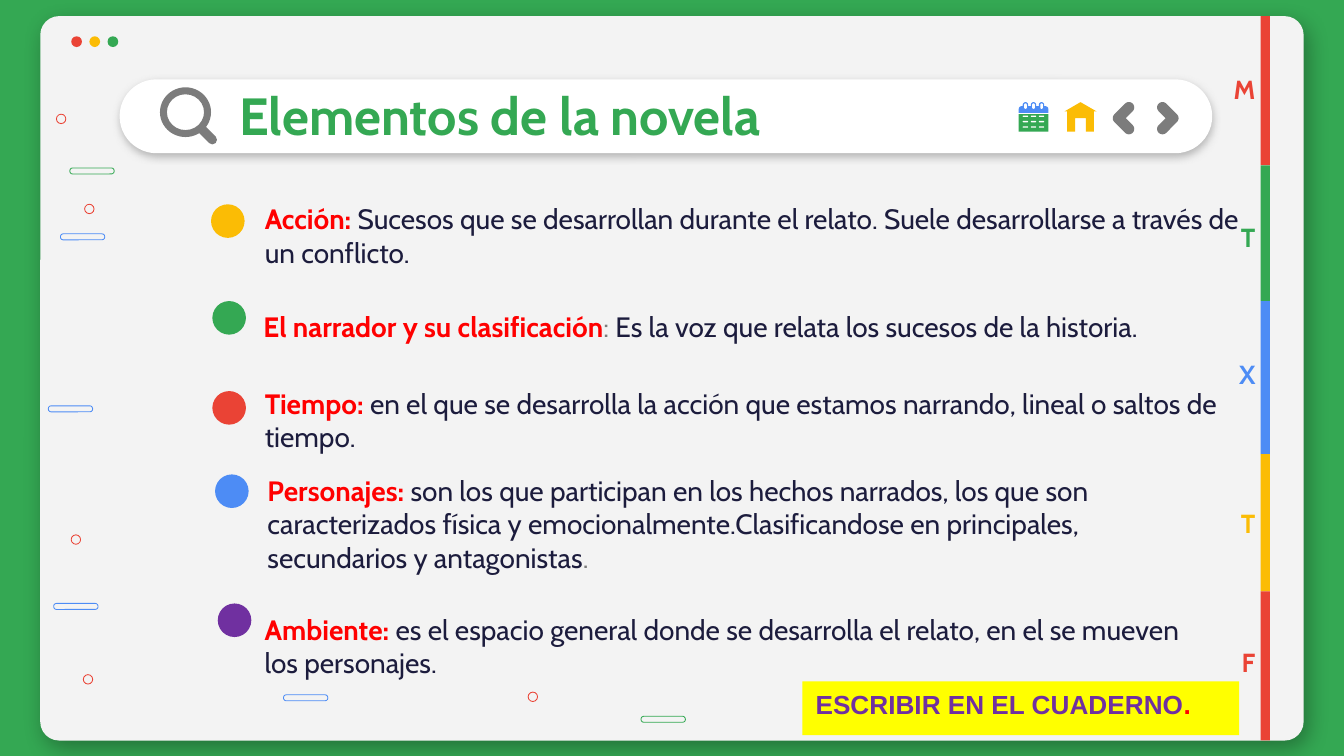
from math import cos, radians, sin, sqrt

from lxml import etree
from pptx import Presentation
from pptx.dml.color import RGBColor
from pptx.enum.shapes import MSO_CONNECTOR, MSO_SHAPE
from pptx.enum.text import MSO_ANCHOR, MSO_AUTO_SIZE, PP_ALIGN
from pptx.oxml.ns import qn
from pptx.util import Inches, Pt

OVAL, RECT, ROUND = MSO_SHAPE.OVAL, MSO_SHAPE.RECTANGLE, MSO_SHAPE.ROUNDED_RECTANGLE
DONUT, TOP_ROUND = MSO_SHAPE.DONUT, MSO_SHAPE.ROUND_2_SAME_RECTANGLE
LEFT, RIGHT = PP_ALIGN.LEFT, PP_ALIGN.RIGHT
TOP, MIDDLE = MSO_ANCHOR.TOP, MSO_ANCHOR.MIDDLE

THEME = {
    "green": "34A853", "red": "EA4335", "yellow": "FBBC05", "blue": "4D8CF5",
    "purple": "7030A0", "gray": "7C7C7C", "panel": "F3F3F3", "white": "FFFFFF",
    "term": "FF0000", "ink": "1C1C3D", "note": "FFFF00", "black": "000000",
    "font": "Cabin", "note_font": "Arial", "title": 28, "body": 15, "label": 14,
}

TITLE = "Elementos de la novela"
# runs (text, colour, bold), text box, bullet colour, bullet position
ELEMENTS = [
    ([("Acción: ", "term", True),
      ("Sucesos que se desarrollan durante el relato. Suele desarrollarse a "
       "través de un conflicto.", "ink", False)],
     (1.87, 1.47, 7.53, 0.56), "yellow", (1.57, 1.52)),
    ([("El narrador y su clasificación", "term", True), (": ", "gray", False),
      ("Es la voz que relata los sucesos de la historia.", "ink", False)],
     (1.86, 2.12, 7.35, 0.62), "green", (1.58, 2.24)),
    ([("Tiempo: ", "term", True),
      ("en el que se desarrolla la acción que estamos narrando, lineal o "
       "saltos de tiempo.", "ink", False)],
     (1.87, 2.78, 7.35, 0.69), "red", (1.58, 2.91)),
    ([("Personajes: ", "term", True),
      ("son los que participan en los hechos narrados, los que son "
       "caracterizados física y emocionalmente.Clasificandose en principales, "
       "secundarios y antagonistas", "ink", False), (".", "gray", False)],
     (1.89, 3.43, 7.11, 0.93), "blue", (1.6, 3.53)),
    ([("Ambiente: ", "term", True),
      ("es el espacio general donde se desarrolla el relato, en el se mueven "
       "los personajes.", "ink", False)],
     (1.87, 4.34, 7.11, 0.93), "purple", (1.62, 4.49)),
]
NOTE = [("ESCRIBIR EN EL CUADERNO", "purple", True), (".", "term", True)]
# letter, colour, label top, band top, band bottom
TABS = [("M", "red", 0.51, 0.12, 1.23), ("T", "green", 1.61, 1.23, 2.24),
        ("X", "blue", 2.63, 2.24, 3.38), ("T", "yellow", 3.74, 3.38, 4.4),
        ("F", "red", 4.77, 4.4, 5.51)]
WINDOW_DOTS = ["red", "yellow", "green"]
RINGS = [(0.53, 3.98), (0.63, 1.52), (0.42, 0.85), (0.62, 5.02), (3.93, 5.15)]
DASHES = [(0.45, 1.74, "blue"), (0.4, 4.49, "blue"), (0.52, 1.25, "green"),
          (2.11, 5.17, "blue"), (0.36, 3.02, "blue"), (4.77, 5.33, "green")]
HOUSE = [(8.04, 0.76), (7.92, 0.83), (7.94, 0.83), (7.94, 0.98), (8, 0.98),
         (8, 0.88), (8.08, 0.88), (8.08, 0.98), (8.14, 0.98), (8.14, 0.83),
         (8.16, 0.83)]


def rgb(name):
    return RGBColor.from_string(THEME[name])


def paint(sp, fill=None, line=None):
    sp.shadow.inherit = False
    if fill:
        sp.fill.solid()
        sp.fill.fore_color.rgb = rgb(fill)
    else:
        sp.fill.background()
    if line:
        sp.line.color.rgb = rgb(line)
        sp.line.width = Pt(0.44)
    else:
        sp.line.fill.background()
    return sp


def add(s, kind, box, fill=None, line=None, adj=None):
    sp = s.shapes.add_shape(kind, *map(Inches, box))
    if adj is not None:
        sp.adjustments[0] = adj
    return paint(sp, fill, line)


def cast_shadow(sp, color, alpha, blur, dist, angle):
    effects = sp.element.spPr.find(qn("a:effectLst"))
    shadow = etree.SubElement(effects, qn("a:outerShdw"), blurRad=str(Pt(blur)),
                              dist=str(Pt(dist)), dir=str(angle * 60000),
                              algn="bl", rotWithShape="0")
    clr = etree.SubElement(shadow, qn("a:srgbClr"), val=THEME[color])
    etree.SubElement(clr, qn("a:alpha"), val=str(alpha * 1000))


def add_outline(s, points, fill):
    pts = [(Inches(x), Inches(y)) for x, y in points]
    fb = s.shapes.build_freeform(*pts[0])
    fb.add_line_segments(pts[1:], close=True)
    return paint(fb.convert_to_shape(), fill)


def chevron(x, side):
    """Outline of a round-ended angle centred on x; side 1 points right, -1 left."""
    r, y = 0.04, 0.88
    arcs = [(-0.04, y - 0.08, 135, 315), (0.04, y, -45, 45), (-0.04, y + 0.08, 45, 225)]
    pts = [(cx + r * cos(radians(a)), cy + r * sin(radians(a)))
           for cx, cy, start, end in arcs for a in range(start, end + 1, 15)]
    pts.append((0.04 - r * sqrt(2), y))
    return [(x + side * px, py) for px, py in pts]


def write(sp, runs, size, font="font", align=LEFT, anchor=MIDDLE, inset=0.1):
    tf = sp.text_frame
    tf.word_wrap, tf.auto_size = True, MSO_AUTO_SIZE.NONE
    tf.vertical_anchor = anchor
    tf.margin_left = tf.margin_right = Inches(0.1)
    tf.margin_top = tf.margin_bottom = Inches(inset)
    p = tf.paragraphs[0]
    p.alignment, p.space_before = align, Pt(0)
    pPr = p._p.get_or_add_pPr()
    pPr.set("marL", "0")
    pPr.set("indent", "0")
    etree.SubElement(pPr, qn("a:buNone"))
    for text, color, bold in runs:
        r = p.add_run()
        r.text = text
        r.font.name, r.font.size, r.font.bold = THEME[font], Pt(THEME[size]), bold
        r.font.color.rgb = rgb(color)


def place(sp, box):
    """Move a placeholder into its box and in front of what is drawn so far."""
    sp.left, sp.top, sp.width, sp.height = map(Inches, box)
    sp.element.getparent().append(sp.element)
    return sp


def draw_window(s):
    panel = add(s, ROUND, (0.3, 0.12, 9.4, 5.39), "panel", adj=0.026)
    cast_shadow(panel, "black", 32, 12.4, 5.2, 57)
    for i, color in enumerate(WINDOW_DOTS):
        add(s, OVAL, (0.53 + i * 0.135, 0.27, 0.08, 0.08), color)
    for x, y in RINGS:
        add(s, OVAL, (x, y, 0.07, 0.07), line="red")
    for x, y, color in DASHES:
        add(s, ROUND, (x, y, 0.33, 0.045), line=color, adj=0.45)
    bar = add(s, ROUND, (0.89, 0.59, 8.13, 0.55), "white", adj=0.5)
    cast_shadow(bar, "gray", 50, 4.5, 1.5, 90)


def draw_magnifier(s):
    add(s, DONUT, (1.19, 0.65, 0.38, 0.37), "gray", adj=0.14)
    handle = s.shapes.add_connector(MSO_CONNECTOR.STRAIGHT,
                                    *map(Inches, (1.5, 0.96, 1.58, 1.04)))
    handle.line.color.rgb, handle.line.width = rgb("gray"), Pt(5)
    spPr = handle.element.spPr
    spPr.find(qn("a:ln")).set("cap", "rnd")
    etree.SubElement(spPr, qn("a:effectLst"))


def draw_calendar(s):
    add(s, RECT, (7.58, 0.85, 0.22, 0.13), "green")
    add(s, TOP_ROUND, (7.58, 0.79, 0.22, 0.05), "blue", adj=0.4)
    for col in range(3):
        x = 7.61 + col * 0.06
        add(s, ROUND, (x, 0.76, 0.04, 0.07), "blue", adj=0.5)
        add(s, ROUND, (x + 0.01, 0.77, 0.02, 0.04), "white", adj=0.5)
        for row in range(3):
            add(s, ROUND, (x, 0.86 + row * 0.04, 0.04, 0.01), "white", adj=0.5)


def main():
    prs = Presentation()
    prs.slide_width = Inches(10)
    prs.slide_height = prs.slide_width * 9 // 16
    s = prs.slides.add_slide(prs.slide_layouts.get_by_name("Comparison"))
    s.background.fill.solid()
    s.background.fill.fore_color.rgb = rgb("green")
    title, *bodies = s.placeholders

    draw_window(s)
    draw_magnifier(s)
    write(place(title, (1.68, 0.59, 7.09, 0.52)), [(TITLE, "green", True)], "title")

    for i, (runs, box, color, dot) in enumerate(ELEMENTS):
        add(s, OVAL, (*dot, 0.25, 0.25), color)
        if i < len(bodies):
            sp = place(bodies[i], box)
        else:
            sp = s.shapes.add_textbox(*map(Inches, box))
        write(sp, runs, "body")

    for letter, color, label_top, top, bottom in TABS:
        add(s, RECT, (9.38, top, 0.07, bottom - top), color)
        label = s.shapes.add_textbox(*map(Inches, (8.96, label_top, 0.48, 0.31)))
        write(label, [(letter, color, True)], "label", align=RIGHT)

    draw_calendar(s)
    add_outline(s, HOUSE, "yellow")
    add_outline(s, chevron(8.36, -1), "gray")
    add_outline(s, chevron(8.69, 1), "gray")

    note = add(s, RECT, (5.97, 5.07, 3.25, 0.4), "note")
    write(note, NOTE, "label", font="note_font", anchor=TOP, inset=0.05)
    prs.save("out.pptx")


if __name__ == "__main__":
    main()
